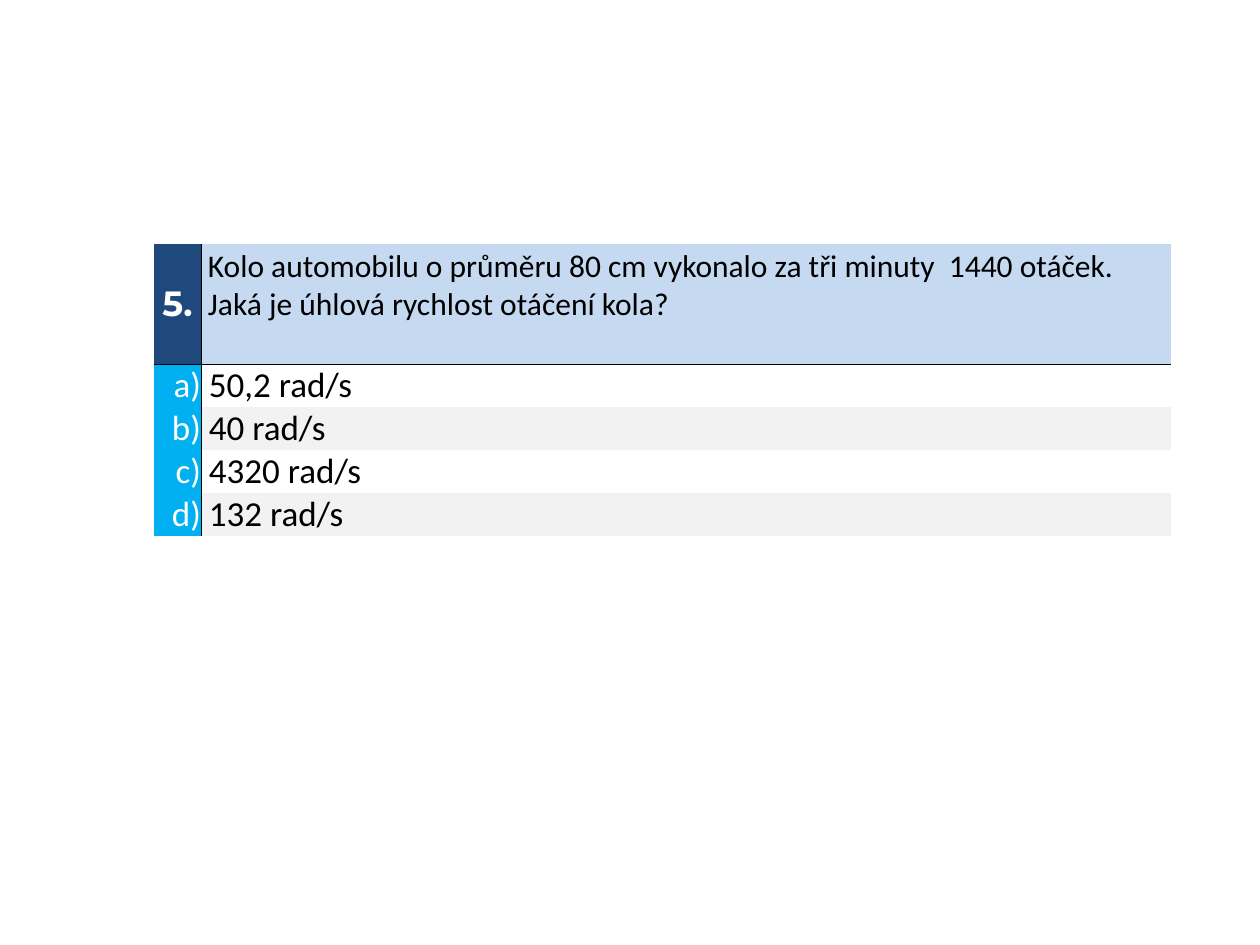
from dataclasses import dataclass

from lxml.etree import SubElement
from pptx import Presentation
from pptx.dml.color import RGBColor
from pptx.enum.text import MSO_ANCHOR, PP_ALIGN
from pptx.oxml.ns import qn
from pptx.util import Emu, Pt


@dataclass(frozen=True)
class Theme:
    navy: str = "1F497D"
    pale_blue: str = "C5D9F1"
    cyan: str = "00B0F0"
    grey: str = "F2F2F2"
    black: str = "000000"
    white: str = "FFFFFF"
    body_font: str = "Calibri"
    number_font: str = "Montserrat"
    question_size: int = 18
    answer_size: int = 20
    rule_width: float = 0.5


theme = Theme()


def px(length):
    return Emu(round(length * 914400 / 126))


def fill_cell(cell, text, fill, color, size, anchor, align, ruled_edges,
              font=theme.body_font, bold=False, left=0, top=0):
    # Borders come before the fill in the cell properties
    properties = cell._tc.get_or_add_tcPr()
    for edge in "LRTB":
        line = SubElement(properties, qn(f"a:ln{edge}"), w=str(Pt(theme.rule_width)))
        if edge in ruled_edges:
            SubElement(SubElement(line, qn("a:solidFill")), qn("a:srgbClr"), val=theme.black)
        else:
            SubElement(line, qn("a:noFill"))
    if fill:
        cell.fill.solid()
        cell.fill.fore_color.rgb = RGBColor.from_string(fill)
    else:
        cell.fill.background()
    cell.margin_left, cell.margin_top = px(left), px(top)
    cell.margin_right = cell.margin_bottom = 0
    cell.vertical_anchor = anchor
    cell.text_frame.text = text
    for paragraph in cell.text_frame.paragraphs:
        paragraph.alignment = align
        for run in paragraph.runs:
            run.font.name, run.font.size, run.font.bold = font, Pt(size), bold
            run.font.color.rgb = RGBColor.from_string(color)


presentation = Presentation()
presentation.slide_width, presentation.slide_height = px(1260), px(945)
slide = presentation.slides.add_slide(presentation.slide_layouts[6])

question = ("Kolo automobilu o průměru 80 cm vykonalo za tři minuty  1440 otáček.\n"
            "Jaká je úhlová rychlost otáčení kola?")
answers = ["50,2 rad/s", "40 rad/s", "4320 rad/s", "132 rad/s"]

# Table grid: a tall question row above equal answer rows
column_widths = [47, 970]
row_heights = [120] + [43] * len(answers)
table = slide.shapes.add_table(len(row_heights), len(column_widths), px(154), px(244),
                               px(sum(column_widths)), px(sum(row_heights))).table
table.first_row = table.horz_banding = False
for column, width in zip(table.columns, column_widths):
    column.width = px(width)
for row, height in zip(table.rows, row_heights):
    row.height = px(height)

# Question row
fill_cell(table.cell(0, 0), "5.", theme.navy, theme.white, theme.answer_size,
          MSO_ANCHOR.MIDDLE, PP_ALIGN.CENTER, "RB", font=theme.number_font, bold=True)
fill_cell(table.cell(0, 1), question, theme.pale_blue, theme.black, theme.question_size,
          MSO_ANCHOR.TOP, PP_ALIGN.LEFT, "LB", left=7, top=3)

# Answer rows, every second one shaded
for index, answer in enumerate(answers):
    top_edge = "T" if index == 0 else ""
    fill_cell(table.cell(index + 1, 0), f"{'abcd'[index]})", theme.cyan, theme.white,
              theme.answer_size, MSO_ANCHOR.MIDDLE, PP_ALIGN.RIGHT, "R" + top_edge)
    fill_cell(table.cell(index + 1, 1), answer, theme.grey if index % 2 else None,
              theme.black, theme.answer_size, MSO_ANCHOR.BOTTOM, PP_ALIGN.LEFT,
              "L" + top_edge, left=8)

presentation.save("out.pptx")
